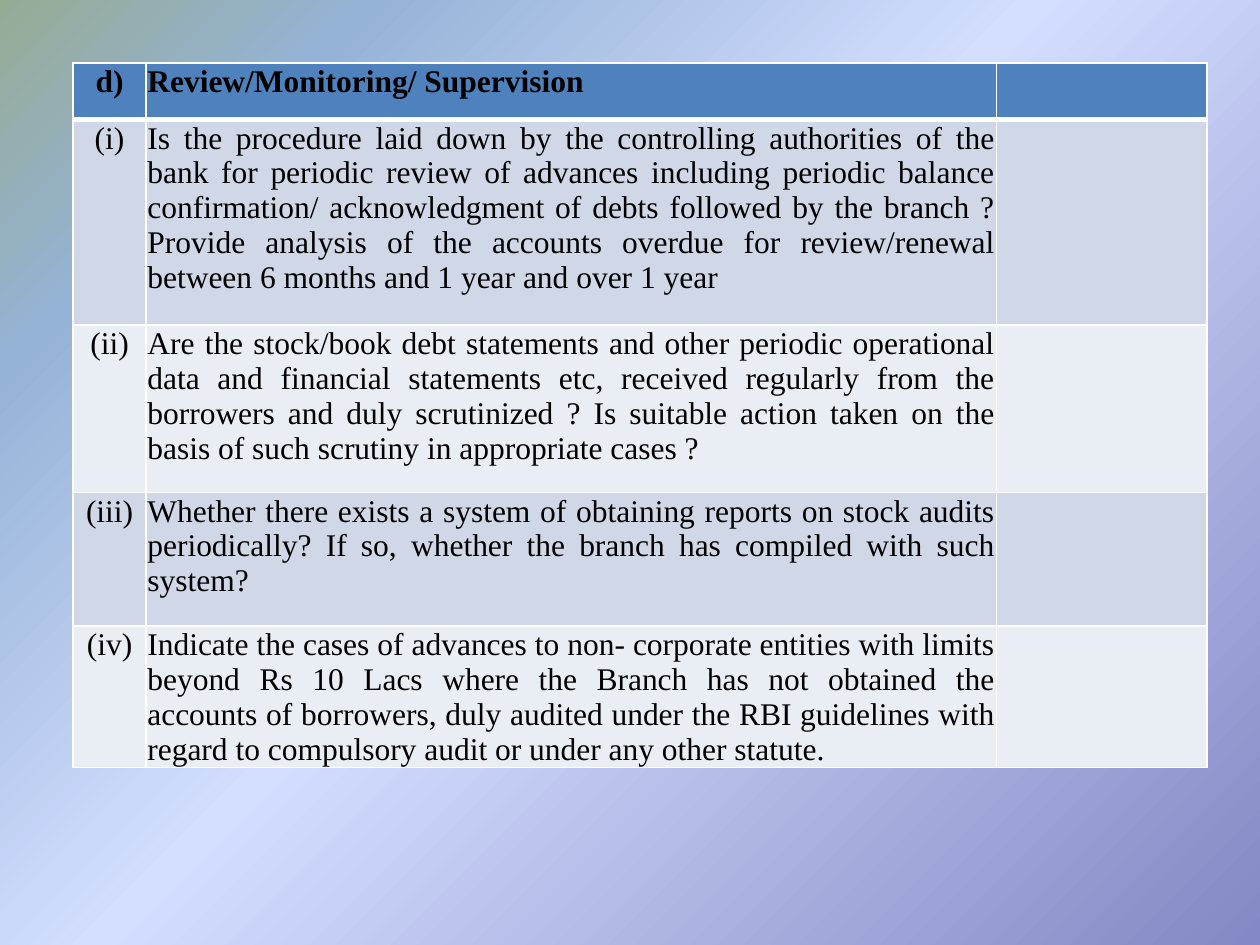
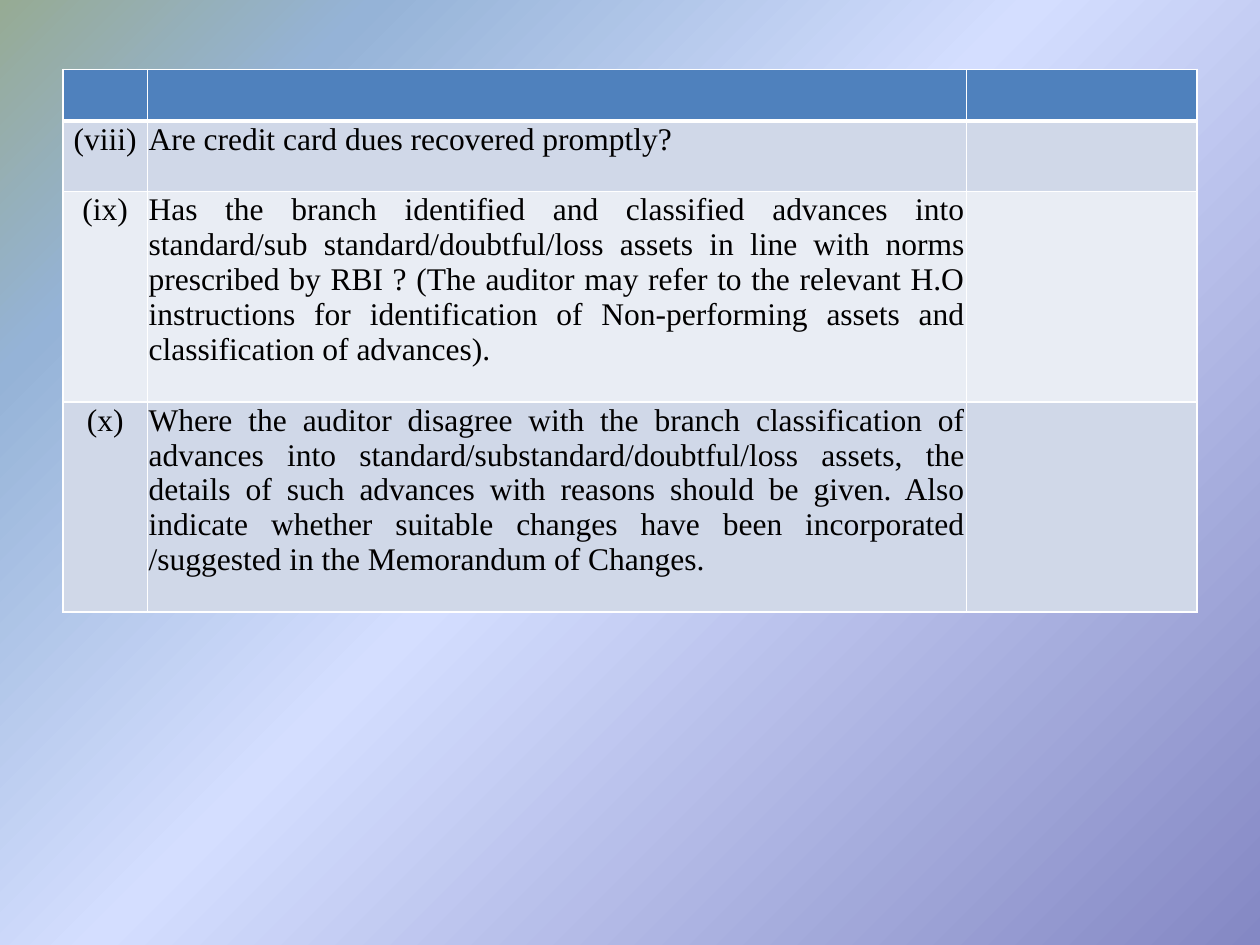
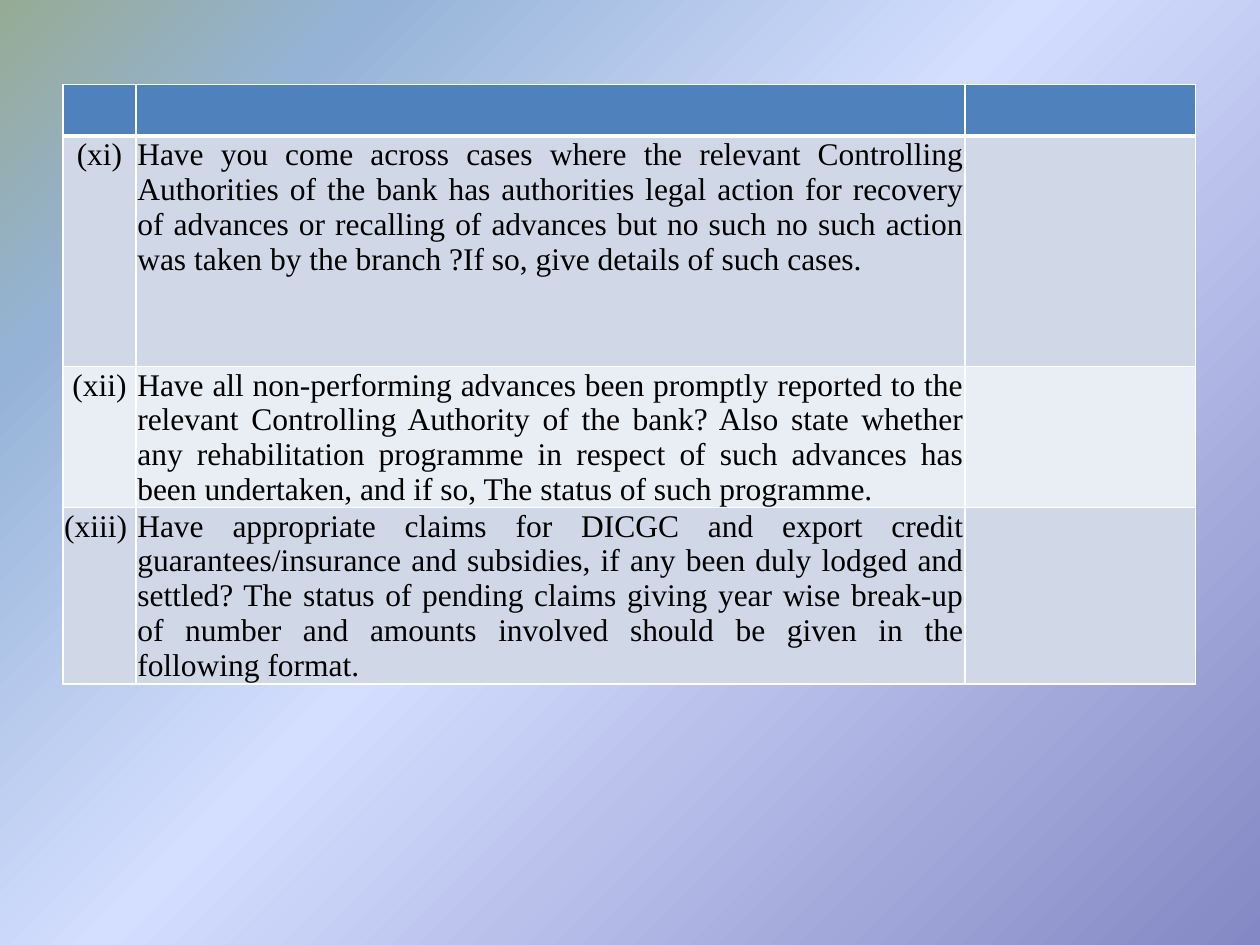
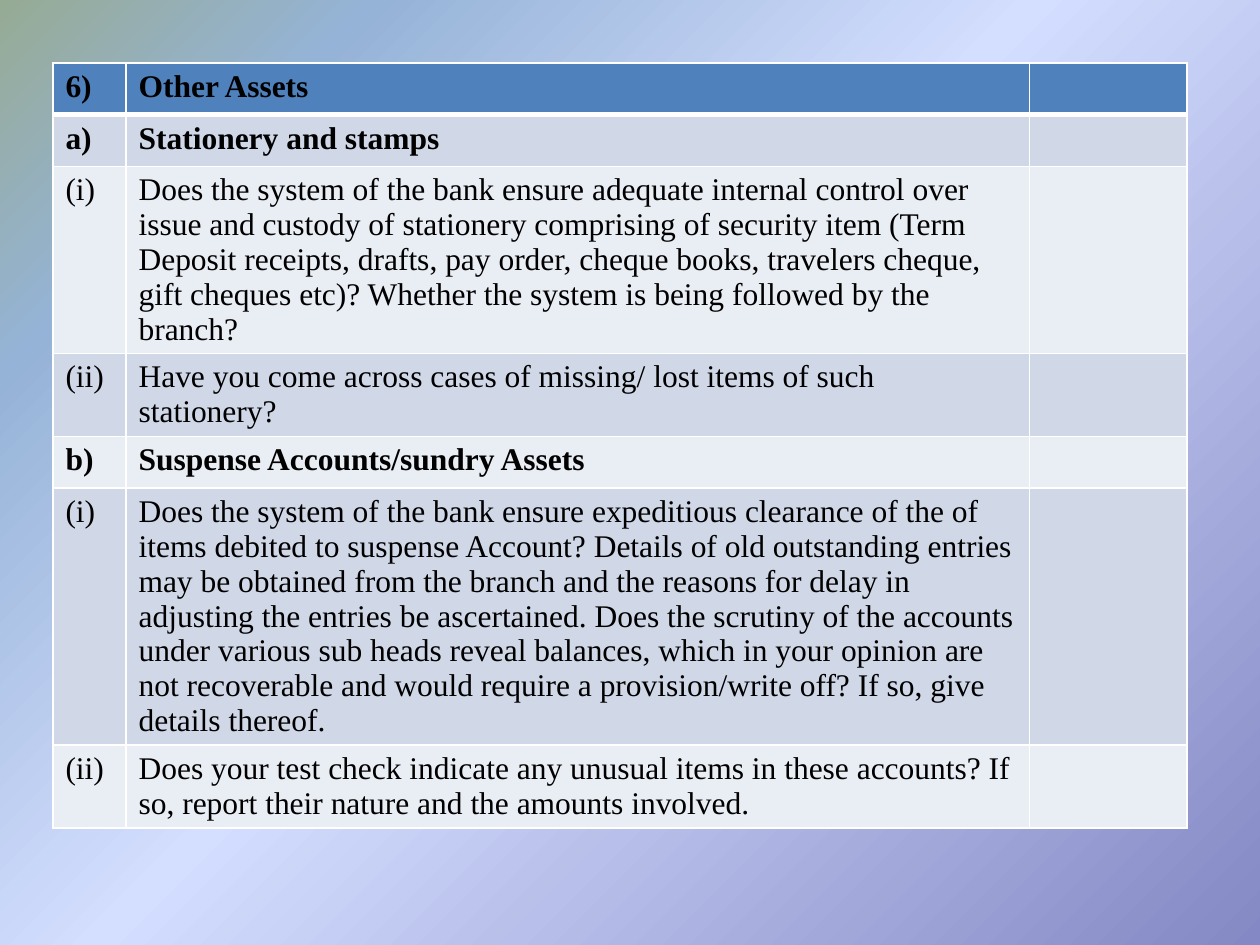
from lxml import etree
from pptx import Presentation
from pptx.dml.color import RGBColor
from pptx.enum import text
from pptx.oxml import ns, parse_xml
from pptx.util import Inches, Pt

COLORS = {
    "header": "4F81BD", "odd": "D0D8E8", "even": "E9EDF4",
    "border": "FFFFFF", "ink": "010000",
}
BACKDROP = [(0, "8488C4"), (53, "D4DEFF"), (83, "95B3D7"), (100, "96AB94")]
FONT = "Times New Roman"
LEFT, CENTER, JUSTIFY = text.PP_ALIGN.LEFT, text.PP_ALIGN.CENTER, text.PP_ALIGN.JUSTIFY
TIGHT = (0.01, 0.01, 0.01, 0)
ROOMY = (0.1, 0.05, 0.1, 0.05)

# Each row: height, number, question, bold
REVIEW = [
    (0.45, "d)", "Review/Monitoring/ Supervision", True),
    (1.63, "(i)", "Is the procedure laid down by the controlling authorities of the bank for "
     "periodic review of advances including periodic balance confirmation/ acknowledgment of "
     "debts followed by the branch ? Provide analysis of the accounts overdue for "
     "review/renewal between 6 months and 1 year and over 1 year", False),
    (1.33, "(ii)", "Are the stock/book debt statements and other periodic operational data and "
     "financial statements etc, received regularly from the borrowers and duly scrutinized ? "
     "Is suitable action taken on the basis of such scrutiny in appropriate cases ?", False),
    (1.06, "(iii)", "Whether there exists a system of obtaining reports on stock audits "
     "periodically? If so, whether the branch has compiled with such system?", False),
    (1.12, "(iv)", "Indicate the cases of advances to non- corporate entities with limits beyond "
     "Rs 10 Lacs where the Branch has not obtained the accounts of borrowers, duly audited "
     "under the RBI guidelines with regard to compulsory audit or under any other statute.",
     False),
]
CLASSIFICATION = [
    (0.41, "", "", False),
    (0.56, "(viii)", "Are credit card dues recovered promptly?", False),
    (1.67, "(ix)", "Has the branch identified and classified advances into standard/sub "
     "standard/doubtful/loss assets in line with norms prescribed by RBI ? (The auditor may "
     "refer to the relevant H.O instructions for identification of Non-performing assets and "
     "classification of advances).", False),
    (1.67, "(x)", "Where the auditor disagree with the branch classification of advances into "
     "standard/substandard/doubtful/loss assets, the details of such advances with reasons "
     "should be given. Also indicate whether suitable changes have been incorporated "
     "/suggested in the Memorandum of Changes.", False),
]
RECOVERY = [
    (0.41, "", "", False),
    (1.83, "(xi)", "Have you come across cases where the relevant Controlling Authorities of the "
     "bank has authorities legal action for recovery of advances or recalling of advances but "
     "no such no such action was taken by the branch ?If so, give details of such cases.",
     False),
    (1.12, "(xii)", "Have all non-performing advances been promptly reported to the relevant "
     "Controlling Authority of the bank? Also state whether any rehabilitation programme in "
     "respect of such advances has been undertaken, and if so, The status of such programme.",
     False),
    (1.4, "(xiii)", "Have appropriate claims for DICGC and export credit guarantees/insurance "
     "and subsidies, if any been duly lodged and settled? The status of pending claims giving "
     "year wise break-up of number and amounts involved should be given in the following "
     "format.", False),
]
OTHER_ASSETS = [
    (0.41, "6)", "Other Assets", True),
    (0.41, "a)", "Stationery and stamps", True),
    (1.48, "(i)", "Does the system of the bank ensure adequate internal control over issue and "
     "custody of stationery comprising of security item (Term Deposit receipts, drafts, pay "
     "order, cheque books, travelers cheque, gift cheques etc)? Whether the system is being "
     "followed by the branch?", False),
    (0.66, "(ii)", "Have you come across cases of missing/ lost items of such stationery?", False),
    (0.41, "b)", "Suspense Accounts/sundry Assets", True),
    (2.04, "(i)", "Does the system of the bank ensure expeditious clearance of the of items "
     "debited to suspense Account? Details of old outstanding entries may be obtained from the "
     "branch and the reasons for delay in adjusting the entries be ascertained. Does the "
     "scrutiny of the accounts under various sub heads reveal balances, which in your opinion "
     "are not recoverable and would require a provision/write off? If so, give details "
     "thereof.", False),
    (0.66, "(ii)", "Does your test check indicate any unusual items in these accounts? If so, "
     "report their nature and the amounts involved.", False),
]


def set_backdrop(master):
    """Give every slide the gradient that starts in the bottom right corner."""
    master.background.fill.solid()
    solid = master.element.find(".//" + ns.qn("p:bgPr")).find(ns.qn("a:solidFill"))
    stops = "".join(f'<a:gs pos="{pos * 1000}"><a:srgbClr val="{color}"/></a:gs>'
                    for pos, color in BACKDROP)
    gradient = parse_xml(
        f'<a:gradFill {ns.nsdecls("a")} rotWithShape="1"><a:gsLst>{stops}</a:gsLst>'
        '<a:path path="circle"><a:fillToRect l="100000" t="100000"/></a:path></a:gradFill>')
    solid.getparent().replace(solid, gradient)


def set_borders(cell, top, bottom):
    """Draw the four sides; top and bottom are widths in points."""
    props = cell._tc.get_or_add_tcPr()
    sides = [("lnL", 1), ("lnR", 1), ("lnT", top), ("lnB", bottom)]
    for place, (side, width) in enumerate(sides):
        line = etree.Element(ns.qn(f"a:{side}"), w=str(Pt(width)))
        fill = etree.SubElement(line, ns.qn("a:solidFill"))
        etree.SubElement(fill, ns.qn("a:srgbClr"), val=COLORS["border"])
        props.insert(place, line)


def write_cell(cell, words, bold, align, insets):
    (cell.margin_left, cell.margin_top,
     cell.margin_right, cell.margin_bottom) = map(Inches, insets)
    paragraph = cell.text_frame.paragraphs[0]
    paragraph.alignment = align
    run = paragraph.add_run()
    run.text = words
    run.font.name, run.font.size, run.font.bold = FONT, Pt(18), bold
    run.font.color.rgb = RGBColor.from_string(COLORS["ink"])


def add_checklist(prs, box, widths, rows, aligns=(CENTER, JUSTIFY), insets=TIGHT, exceptions=None):
    """Add a slide with a number, question and answer column.

    exceptions maps (row, column) to an alignment that differs from its column.
    """
    exceptions = exceptions or {}
    slide = prs.slides.add_slide(prs.slide_layouts[6])
    left, top, width = box
    height = sum(row[0] for row in rows)
    checklist = slide.shapes.add_table(len(rows), len(widths), Inches(left), Inches(top),
                                       Inches(width), Inches(height)).table
    for column, column_width in zip(checklist.columns, widths):
        column.width = Inches(column_width)
    for r, (row_height, number, question, bold) in enumerate(rows):
        checklist.rows[r].height = Inches(row_height)
        band = "header" if r == 0 else "odd" if r % 2 else "even"
        for c, words in enumerate((number, question, "")):
            cell = checklist.cell(r, c)
            cell.fill.solid()
            cell.fill.fore_color.rgb = RGBColor.from_string(COLORS[band])
            set_borders(cell, top=3 if r == 1 else 1, bottom=3 if r == 0 else 1)
            if words:
                write_cell(cell, words, bold, exceptions.get((r, c), aligns[c]), insets)


def main():
    prs = Presentation()
    prs.slide_width, prs.slide_height = Inches(10), Inches(7.5)
    set_backdrop(prs.slide_master)
    add_checklist(prs, (0.58, 0.5, 9), (0.58, 6.75, 1.67), REVIEW)
    add_checklist(prs, (0.5, 0.55, 9), (0.67, 6.5, 1.83), CLASSIFICATION,
                  exceptions={(1, 1): LEFT})
    add_checklist(prs, (0.5, 0.67, 9), (0.58, 6.58, 1.83), RECOVERY,
                  exceptions={(3, 0): JUSTIFY})
    add_checklist(prs, (0.42, 0.5, 9), (0.58, 7.17, 1.25), OTHER_ASSETS,
                  aligns=(LEFT, LEFT), insets=ROOMY)
    prs.save("out.pptx")


if __name__ == "__main__":
    main()
